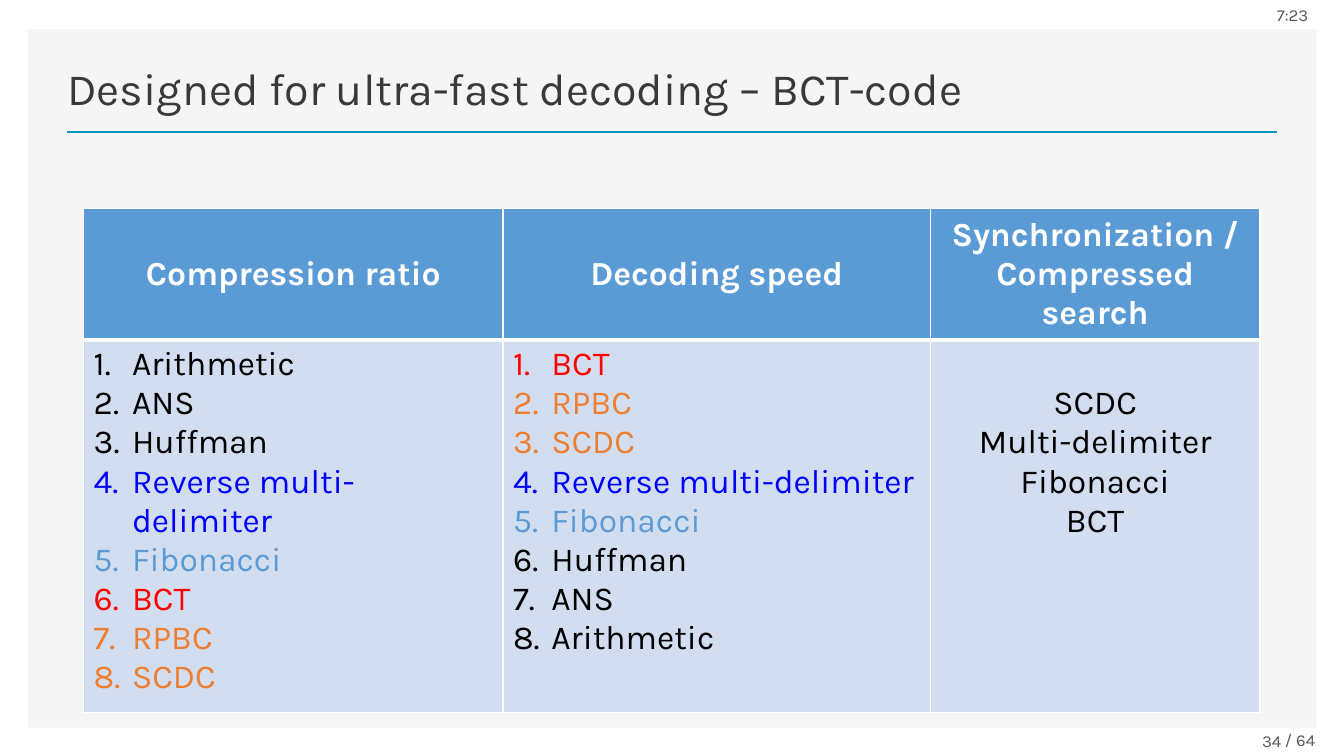
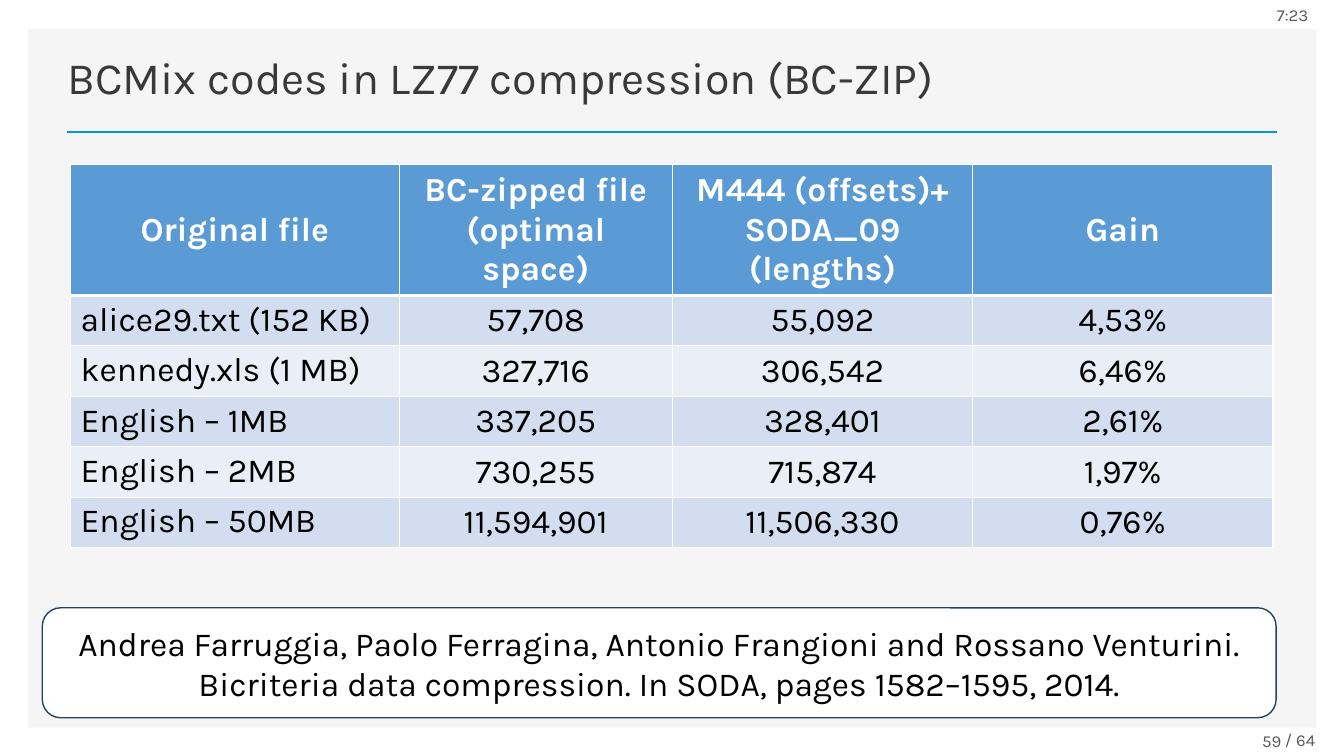
"""Build two slides that compare compression codes."""
from lxml import etree
from pptx import Presentation
from pptx import util as u
from pptx.dml.color import RGBColor
from pptx.enum import shapes, text
from pptx.oxml.ns import qn

FONT = "Karla"
WHITE = RGBColor(0xFF, 0xFF, 0xFF)
BLACK = RGBColor(0x00, 0x00, 0x00)
PANEL = RGBColor(0xF5, 0xF5, 0xF5)
TEAL = RGBColor(0x00, 0x9B, 0xC0)
TITLE = RGBColor(0x3B, 0x38, 0x38)
GREY = RGBColor(0x59, 0x59, 0x59)
NAVY = RGBColor(0x28, 0x44, 0x5D)
SKY = RGBColor(0x5B, 0x9B, 0xD5)
BAND_DARK = RGBColor(0xD2, 0xDE, 0xEF)
BAND_LIGHT = RGBColor(0xEA, 0xEF, 0xF7)
BLUE = RGBColor(0x00, 0x00, 0xFF)
RED = RGBColor(0xFF, 0x00, 0x00)
ORANGE = RGBColor(0xED, 0x7D, 0x31)

CELLS_PER_INCH = 12
LEFT, CENTER, RIGHT = text.PP_ALIGN.LEFT, text.PP_ALIGN.CENTER, text.PP_ALIGN.RIGHT
TOP, MIDDLE, BOTTOM = text.MSO_ANCHOR.TOP, text.MSO_ANCHOR.MIDDLE, text.MSO_ANCHOR.BOTTOM
HEADER_ROW, BODY_ROW = 15.2, 5.87

CODE_COLORS = {
    "Reverse multi-delimiter": BLUE,
    "Fibonacci": SKY,
    "BCT": RED,
    "RPBC": ORANGE,
    "SCDC": ORANGE,
}
RATIO_RANKING = ["Arithmetic", "ANS", "Huffman", "Reverse multi-delimiter",
                 "Fibonacci", "BCT", "RPBC", "SCDC"]
SPEED_RANKING = ["BCT", "RPBC", "SCDC", "Reverse multi-delimiter",
                 "Fibonacci", "Huffman", "ANS", "Arithmetic"]
SEARCHABLE = ["SCDC", "Multi-delimiter", "Fibonacci", "BCT"]
RANKING_HEADER = ["Compression ratio", "Decoding speed",
                  "Synchronization /\nCompressed search"]
GAIN_HEADER = ["Original file", "BC-zipped file (optimal space)",
               "M444 (offsets)+\nSODA_09 (lengths)", "Gain"]
GAINS = [
    ["alice29.txt (152 KB)", "57,708", "55,092", "4,53%"],
    ["kennedy.xls (1 MB)", "327,716", "306,542", "6,46%"],
    ["English – 1MB", "337,205", "328,401", "2,61%"],
    ["English – 2MB", "730,255", "715,874", "1,97%"],
    ["English – 50MB", "11,594,901", "11,506,330", "0,76%"],
]
REFERENCE = ("Andrea Farruggia, Paolo Ferragina, Antonio Frangioni and Rossano Venturini. "
             "Bicriteria data compression. In SODA, pages 1582–1595, 2014.")


def grid(*cells):
    """Turn grid columns and rows into lengths."""
    return [u.Inches(cell / CELLS_PER_INCH) for cell in cells]


def number(paragraph):
    """Give a paragraph an automatic number with a hanging indent."""
    properties = paragraph._p.get_or_add_pPr()
    indent = u.Inches(0.38)
    properties.set("marL", str(indent))
    properties.set("indent", str(-indent))
    etree.SubElement(properties, qn("a:buFont"), typeface="+mj-lt")
    etree.SubElement(properties, qn("a:buAutoNum"), type="arabicPeriod")


def write(frame, *lines, size=24, color=BLACK, bold=False, align=LEFT,
          numbered=False, colors=None):
    """Write each line as a paragraph, with line breaks at newlines."""
    frame.word_wrap = True
    for index, line in enumerate(lines):
        paragraph = frame.add_paragraph() if index else frame.paragraphs[0]
        paragraph.alignment = align
        if numbered:
            number(paragraph)
        for part_index, part in enumerate(line.split("\n")):
            if part_index:
                paragraph.add_line_break()
            run = paragraph.add_run()
            run.text = part
            run.font.name = FONT
            run.font.size = u.Pt(size)
            run.font.bold = bold
            run.font.color.rgb = (colors or {}).get(line, color)


def add_label(slide, place, words, anchor=MIDDLE, **style):
    """Add a text box."""
    frame = slide.shapes.add_textbox(*grid(*place)).text_frame
    frame.vertical_anchor = anchor
    write(frame, words, **style)


def add_box(slide, kind, place, fill, outline=None):
    """Add a filled preset shape."""
    shape = slide.shapes.add_shape(kind, *grid(*place))
    shape.shadow.inherit = False
    shape.fill.solid()
    shape.fill.fore_color.rgb = fill
    if outline is None:
        shape.line.fill.background()
    else:
        shape.line.color.rgb = outline
        shape.line.width = u.Pt(1)
    return shape


def add_rule(slide, *ends):
    """Add the line under the title."""
    rule = slide.shapes.add_connector(shapes.MSO_CONNECTOR.STRAIGHT, *grid(*ends))
    rule.line.color.rgb = TEAL
    rule.line.width = u.Pt(2)
    etree.SubElement(rule._element.spPr, qn("a:effectLst"))


def add_page(presentation, title, title_top, page_number):
    """Add a slide with the shared panel, title, rule, clock and footer."""
    slide = presentation.slides.add_slide(presentation.slide_layouts[6])
    add_box(slide, shapes.MSO_SHAPE.RECTANGLE, (3.36, 3.48, 153.36, 83.16), PANEL)
    add_rule(slide, 7.92, 15.72, 152.04, 15.72)
    add_label(slide, (6.84, title_top, 143.16, 8.4), title, anchor=BOTTOM,
              size=32, color=TITLE)
    small = {"size": 12, "color": GREY}
    add_label(slide, (151.8, 86.28, 8.2, 3.6), "/ 64", anchor=TOP, **small)
    add_label(slide, (110.76, 85.8, 42.96, 4.8), page_number, align=RIGHT, **small)
    add_label(slide, (150.84, -0.6, 8.4, 4.8), "7:23", **small)
    return slide


def paint_cell(cell, fill, top, bottom):
    """Give a cell white borders and a fill."""
    properties = cell._tc.get_or_add_tcPr()
    for side, width in (("L", 1), ("R", 1), ("T", top), ("B", bottom)):
        border = etree.SubElement(properties, qn(f"a:ln{side}"), w=str(u.Pt(width)))
        solid = etree.SubElement(border, qn("a:solidFill"))
        etree.SubElement(solid, qn("a:srgbClr"), val=str(WHITE))
    cell.fill.solid()
    cell.fill.fore_color.rgb = fill


def add_banded_table(slide, left, top, widths, heights, header):
    """Add a banded table with its header row filled in."""
    place = grid(left, top, sum(widths), sum(heights))
    table = slide.shapes.add_table(len(heights), len(widths), *place).table
    for column, width in zip(table.columns, grid(*widths)):
        column.width = width
    for index, (row, height) in enumerate(zip(table.rows, grid(*heights))):
        row.height = height
        fill = (BAND_LIGHT, BAND_DARK)[index % 2] if index else SKY
        for cell in row.cells:
            paint_cell(cell, fill, 3 if index == 1 else 1, 1 if index else 3)
    for cell, words in zip(table.rows[0].cells, header):
        cell.vertical_anchor = MIDDLE
        write(cell.text_frame, words, color=WHITE, bold=True, align=CENTER)
    return table


def add_ranking_slide(presentation):
    """Rank the codes by ratio and by speed."""
    slide = add_page(presentation, "Designed for ultra-fast decoding – BCT-code", 5.88, "34")
    table = add_banded_table(slide, 9.96, 24.84, (49.92, 50.88, 39.24),
                             (HEADER_ROW, 43.2), RANKING_HEADER)
    for column, ranking in enumerate((RATIO_RANKING, SPEED_RANKING)):
        write(table.cell(1, column).text_frame, *ranking, numbered=True, colors=CODE_COLORS)
    searchable = table.cell(1, 2)
    searchable.margin_top = u.Inches(0.44)
    write(searchable.text_frame, *SEARCHABLE, align=CENTER)


def add_gain_slide(presentation):
    """Compare file sizes and cite the reference."""
    slide = add_page(presentation, "BCMix codes in LZ77 compression (BC-ZIP)", 4.56, "59")
    note = add_box(slide, shapes.MSO_SHAPE.ROUNDED_RECTANGLE,
                   (5.04, 72.36, 146.88, 13.08), WHITE, outline=NAVY)
    note.text_frame.vertical_anchor = MIDDLE
    write(note.text_frame, REFERENCE, align=CENTER)
    heights = [HEADER_ROW] + [BODY_ROW] * len(GAINS)
    table = add_banded_table(slide, 8.4, 19.56, (39.12, 32.52, 35.76, 35.76),
                             heights, GAIN_HEADER)
    for row, values in enumerate(GAINS, start=1):
        for column, value in enumerate(values):
            cell = table.cell(row, column)
            cell.vertical_anchor = MIDDLE if column else TOP
            write(cell.text_frame, value, align=CENTER if column else LEFT)


def main():
    """Build and save the presentation."""
    presentation = Presentation()
    presentation.slide_width, presentation.slide_height = grid(160, 90)
    add_ranking_slide(presentation)
    add_gain_slide(presentation)
    presentation.save("out.pptx")


if __name__ == "__main__":
    main()
